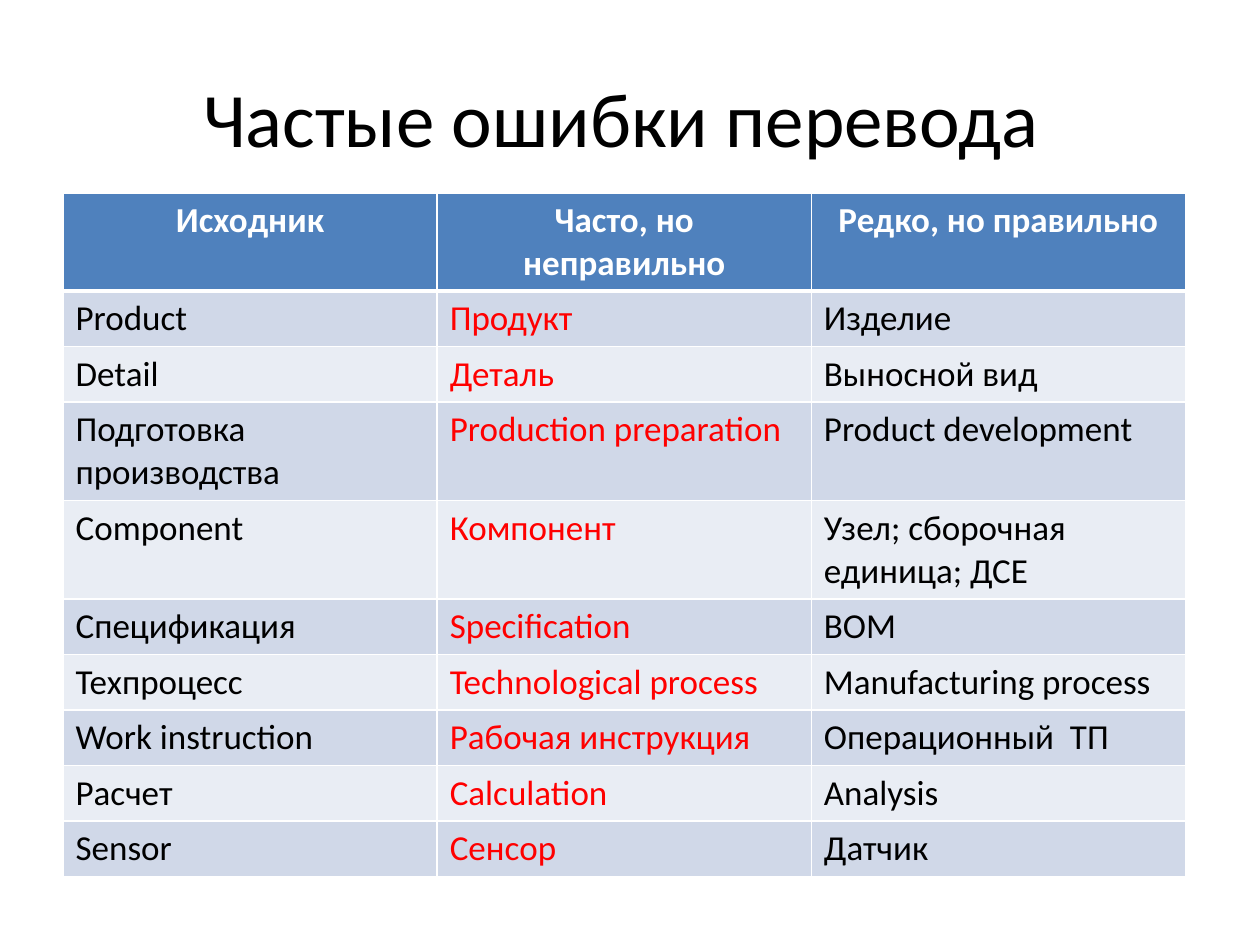
from typing import NamedTuple

from lxml import etree
from pptx import Presentation
from pptx import util as u
from pptx.dml.color import RGBColor
from pptx.enum import text
from pptx.oxml import ns

COLORS = {
    "header": "4F81BD",
    "band_dark": "D0D8E8",
    "band_light": "E9EDF4",
    "white": "FFFFFF",
    "black": "000000",
    "wrong": "FF0000",
}
FONT = "Calibri"
COLUMN_WIDTH = 2.97
ROW_HEIGHT = 0.41


class Term(NamedTuple):
    source: str
    wrong: str
    right: str


HEADER = Term("Исходник", "Часто, но неправильно", "Редко, но правильно")
TERMS = [
    Term("Product", "Продукт", "Изделие"),
    Term("Detail", "Деталь", "Выносной вид"),
    Term("Подготовка производства", "Production preparation", "Product development"),
    Term("Component", "Компонент", "Узел; сборочная единица; ДСЕ"),
    Term("Спецификация", "Specification", "BOM"),
    Term("Техпроцесс", "Technological process", "Manufacturing process"),
    Term("Work instruction", "Рабочая инструкция", "Операционный  ТП"),
    Term("Расчет", "Calculation", "Analysis"),
    Term("Sensor", "Сенсор", "Датчик"),
]


def rgb(name: str) -> RGBColor:
    return RGBColor.from_string(COLORS[name])


def add_span(para, words: str, size: float, color: str, bold: bool = False) -> None:
    span = para.add_run()
    span.text = words
    span.font.name = FONT
    span.font.size = u.Pt(size)
    span.font.bold = bold
    span.font.color.rgb = rgb(color)


def set_borders(cell, top: float = 1, bottom: float = 1) -> None:
    """Draw white borders; widths are in points."""
    properties = cell._tc.get_or_add_tcPr()
    widths = {"lnL": 1, "lnR": 1, "lnT": top, "lnB": bottom}
    for position, (tag, width) in enumerate(widths.items()):
        line = etree.Element(ns.qn(f"a:{tag}"), w=str(u.Pt(width)))
        fill = etree.SubElement(line, ns.qn("a:solidFill"))
        etree.SubElement(fill, ns.qn("a:srgbClr"), val=COLORS["white"])
        properties.insert(position, line)


def add_title(page, words: str) -> None:
    box = page.shapes.title
    box.left, box.top = u.Inches(0.43), u.Inches(0.3)
    box.width, box.height = u.Inches(9), u.Inches(1.25)
    box.text_frame.vertical_anchor = text.MSO_ANCHOR.MIDDLE
    para = box.text_frame.paragraphs[0]
    para.alignment = text.PP_ALIGN.CENTER
    add_span(para, words, 44, "black")


def fill_row(table, index: int, term: Term) -> None:
    is_header = index == 0
    band = "header" if is_header else "band_dark" if index % 2 else "band_light"
    for column, words in enumerate(term):
        cell = table.cell(index, column)
        cell.fill.solid()
        cell.fill.fore_color.rgb = rgb(band)
        set_borders(cell, top=3 if index == 1 else 1, bottom=3 if is_header else 1)
        para = cell.text_frame.paragraphs[0]
        if is_header:
            para.alignment = text.PP_ALIGN.CENTER
            color = "white"
        else:
            color = "wrong" if column == 1 else "black"
        add_span(para, words, 20, color, bold=is_header)


def add_terms_table(page) -> None:
    rows = [HEADER, *TERMS]
    columns = len(HEADER)
    table = page.shapes.add_table(
        len(rows), columns, u.Inches(0.5), u.Inches(1.53),
        u.Inches(COLUMN_WIDTH * columns), u.Inches(ROW_HEIGHT * len(rows)),
    ).table
    for column in table.columns:
        column.width = u.Inches(COLUMN_WIDTH)
    for index, term in enumerate(rows):
        table.rows[index].height = u.Inches(ROW_HEIGHT)
        fill_row(table, index, term)


def main() -> None:
    deck = Presentation()
    deck.slide_width, deck.slide_height = u.Inches(10), u.Inches(7.5)
    page = deck.slides.add_slide(deck.slide_layouts[5])  # title only
    add_title(page, "Частые ошибки перевода")
    add_terms_table(page)
    deck.save("out.pptx")


if __name__ == "__main__":
    main()
